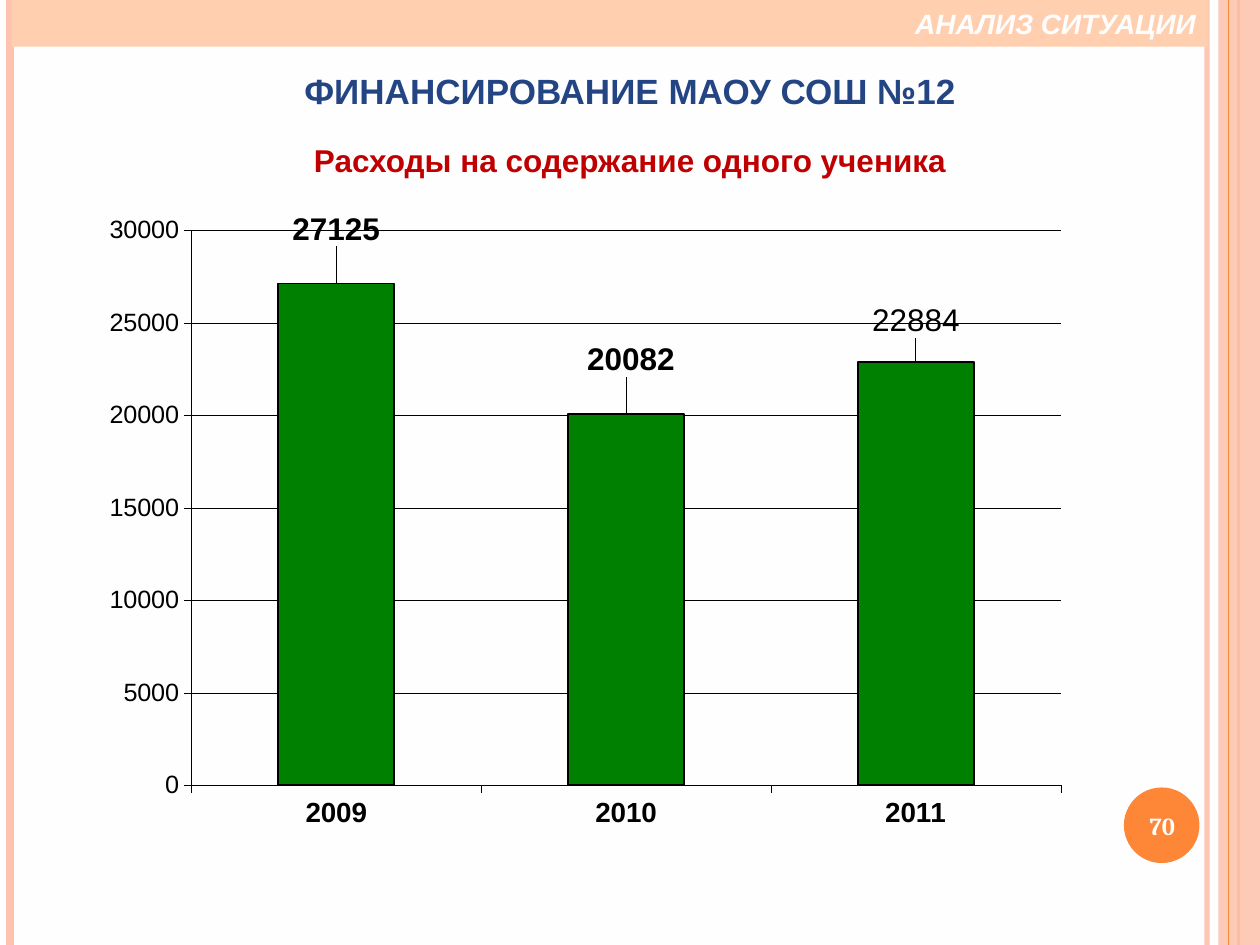
from lxml.etree import SubElement
from pptx import Presentation
from pptx.chart.data import CategoryChartData
from pptx.dml.color import RGBColor
from pptx.enum.chart import XL_CHART_TYPE, XL_LABEL_POSITION, XL_TICK_LABEL_POSITION, XL_TICK_MARK
from pptx.enum.shapes import MSO_CONNECTOR, MSO_SHAPE
from pptx.enum.text import MSO_ANCHOR, PP_ALIGN
from pptx.oxml import parse_xml
from pptx.oxml.ns import nsdecls, qn
from pptx.util import Inches, Pt

COLORS = {
    "paper": "FFFEFF", "pink": "FEC3AE", "orange": "FE8637", "band": "FFCFAF",
    "white": "FFFFFF", "black": "000000", "green": "008000", "red": "C00000",
    "blue": "244583", "gray": "C0C0C0",
}


def rgb(name):
    return RGBColor.from_string(COLORS[name])


def fade(fill, percent):
    """Make a solid fill partly transparent."""
    for color in fill.iter(qn("a:srgbClr")):
        SubElement(color, qn("a:alpha"), val=str(percent * 1000))


def set_font(font, size, color, bold=False, name="Arial"):
    font.size, font.bold, font.name = Pt(size), bold, name
    font.color.rgb = rgb(color)


def set_line(line, color, width):
    line.color.rgb = rgb(color)
    line.width = Pt(width)


def add_rule(slide, x, color, width, alpha=100):
    """Draw a full-height vertical line."""
    rule = slide.shapes.add_connector(
        MSO_CONNECTOR.STRAIGHT, Inches(x), Inches(0), Inches(x), Inches(7.5))
    set_line(rule.line, color, width)
    props = rule._element.spPr
    if alpha < 100:
        fade(props, alpha)
    SubElement(props, qn("a:effectLst"))


def add_block(slide, kind, box, color):
    block = slide.shapes.add_shape(kind, *map(Inches, box))
    block.shadow.inherit = False
    block.fill.solid()
    block.fill.fore_color.rgb = rgb(color)
    block.line.fill.background()
    return block


def write(shape, text, size, color, align=PP_ALIGN.CENTER, name="Arial"):
    frame = shape.text_frame
    frame.word_wrap = True
    frame.vertical_anchor = MSO_ANCHOR.MIDDLE
    para = frame.paragraphs[0]
    para.alignment = align
    para.add_run().text = text
    set_font(para.font, size, color, True, name)
    return para


def add_text(slide, box, *style, **more):
    return write(slide.shapes.add_textbox(*map(Inches, box)), *style, **more)


def add_shade(para):
    """Give the text a soft drop shadow."""
    para.runs[0].font._element.append(parse_xml(
        f'<a:effectLst {nsdecls("a")}><a:outerShdw dist="38100" dir="2700000">'
        f'<a:srgbClr val="{COLORS["gray"]}"/></a:outerShdw></a:effectLst>'))


def make_layout(**places):
    items = "".join(f'<c:{key} val="{val}"/>' for key, val in places.items())
    return parse_xml(f'<c:layout {nsdecls("c")}><c:manualLayout>{items}'
                     '</c:manualLayout></c:layout>')


def style_axis(axis, size, bold):
    axis.major_tick_mark = XL_TICK_MARK.OUTSIDE
    set_font(axis.tick_labels.font, size, "black", bold)
    set_line(axis.format.line, "black", 0.25)


def style_area(chart):
    area = chart._chartSpace.chart.plotArea
    for old in area.findall(qn("c:layout")):
        area.remove(old)
    area.insert(0, make_layout(
        layoutTarget="inner", xMode="edge", yMode="edge",
        x=0.092, y=0.023, w=0.895, h=0.871))
    area.append(parse_xml(
        f'<c:spPr {nsdecls("c", "a")}><a:solidFill><a:srgbClr val="{COLORS["paper"]}">'
        '<a:alpha val="60000"/></a:srgbClr></a:solidFill></c:spPr>'))


def add_labels(series):
    labels = series.data_labels
    labels.show_value = True
    set_font(labels.font, 18, "black", True)
    shifts = [(0, -0.05), (0.005, -0.05), (0, -0.03)]
    for spot, _ in enumerate(shifts):
        label = series.points[spot].data_label
        if spot == 2:
            para = label.text_frame.paragraphs[0]
            para.add_run().text = "22884"
            set_font(para.runs[0].font, 18, "black")
        else:
            set_font(label.font, 18, "black", True)
        label.position = XL_LABEL_POSITION.OUTSIDE_END
    for item, (x, y) in zip(series._element.iter(qn("c:dLbl")), shifts):
        item.find(qn("c:idx")).addnext(make_layout(x=x, y=y))


def add_costs(slide):
    data = CategoryChartData()
    data.categories = ["2009", "2010", "2011"]
    data.add_series("Series 1", [27125, 20082, 22884])
    box = map(Inches, (0.81, 1.68, 7.71, 5.09))
    chart = slide.shapes.add_chart(XL_CHART_TYPE.COLUMN_CLUSTERED, *box, data).chart
    chart.has_legend = chart.has_title = False
    set_font(chart.font, 21.6, "black", True)

    style_axis(chart.category_axis, 15.9, True)
    chart.category_axis.tick_label_position = XL_TICK_LABEL_POSITION.LOW
    axis = chart.value_axis
    style_axis(axis, 14.4, False)
    axis.minimum_scale, axis.maximum_scale, axis.major_unit = 0, 30000, 5000
    set_line(axis.major_gridlines.format.line, "black", 0.25)

    plot = chart.plots[0]
    plot.gap_width = 150
    plot.vary_by_categories = False
    series = plot.series[0]
    series.format.fill.solid()
    series.format.fill.fore_color.rgb = rgb("green")
    set_line(series.format.line, "black", 1)
    add_labels(series)
    style_area(chart)


def add_frame(slide):
    add_rule(slide, 9.58, "pink", 3, 93)
    add_rule(slide, 0.08, "pink", 4.5)
    add_rule(slide, 9.83, "orange", 1.5)
    strip = add_block(slide, MSO_SHAPE.RECTANGLE, (9.67, 0, 0.33, 7.5), "pink")
    fade(strip._element.spPr, 87)
    add_rule(slide, 9.75, "orange", 0.75)
    add_block(slide, MSO_SHAPE.OVAL, (8.92, 6.25, 0.6, 0.6), "orange")
    add_text(slide, (8.89, 6.27, 0.67, 0.57), "70", 14, "white", name="Cambria")


def main():
    deck = Presentation()
    deck.slide_width, deck.slide_height = Inches(10), Inches(7.5)
    slide = deck.slides.add_slide(deck.slide_layouts[6])
    slide.background.fill.solid()
    slide.background.fill.fore_color.rgb = rgb("paper")

    add_frame(slide)
    add_costs(slide)
    add_text(slide, (0, 1.07, 10, 0.4), "Расходы на содержание одного ученика", 18, "red")
    title = add_text(slide, (0, 0.5, 10, 0.44), "ФИНАНСИРОВАНИЕ МАОУ СОШ №12", 20, "blue")
    add_shade(title)
    band = add_block(slide, MSO_SHAPE.RECTANGLE, (0.09, 0, 9.5, 0.37), "band")
    head = write(band, "АНАЛИЗ СИТУАЦИИ", 16, "paper", PP_ALIGN.RIGHT)
    head.font.italic = True
    deck.save("out.pptx")


if __name__ == "__main__":
    main()
